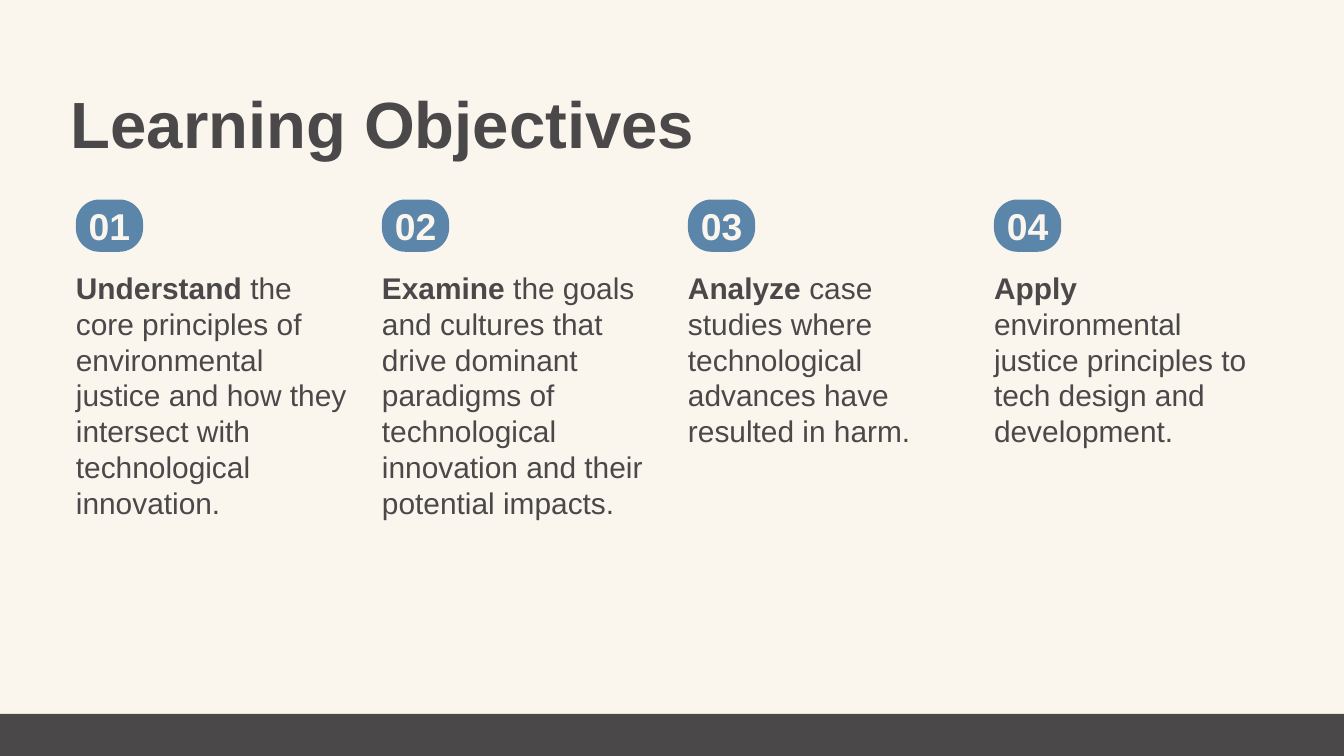
import pptx
import pptx.dml.color
import pptx.enum.shapes
import pptx.enum.text
from pptx.util import Pt

TITLE = "Learning Objectives"
OBJECTIVES = [
    ("Understand", "the core principles of environmental justice and how they "
                   "intersect with technological innovation."),
    ("Examine", "the goals and cultures that drive dominant paradigms of "
                "technological innovation and their potential impacts."),
    ("Analyze", "case studies where technological advances have resulted in harm."),
    ("Apply", "environmental justice principles to tech design and development."),
]

FONT = "Arial"
CREAM, CHARCOAL, BLUE = "FAF6EE", "4A4849", "5B85A9"
SLIDE_WIDTH, SLIDE_HEIGHT = 1440, 810
BAND_HEIGHT = 45
COLUMN_LEFT, COLUMN_PITCH, COLUMN_WIDTH = 81.3, 327.9, 298
BADGE_TOP, BADGE_WIDTH, BADGE_HEIGHT = 213.8, 72, 56
BODY_TOP, BODY_HEIGHT = 288.7, 271
LINE_SPACING = 1.2

SHAPES = pptx.enum.shapes.MSO_SHAPE
ALIGN = pptx.enum.text.PP_ALIGN
ANCHOR = pptx.enum.text.MSO_ANCHOR


def set_color(color_format, hex_color):
    color_format.rgb = pptx.dml.color.RGBColor.from_string(hex_color)


def paint(fill, hex_color):
    fill.solid()
    set_color(fill.fore_color, hex_color)


def add_filled_shape(slide, kind, left, top, width, height, hex_color):
    shape = slide.shapes.add_shape(kind, Pt(left), Pt(top), Pt(width), Pt(height))
    shape.shadow.inherit = False
    paint(shape.fill, hex_color)
    shape.line.fill.background()
    return shape


def write(box, spans, size, hex_color, align=ALIGN.LEFT, anchor=ANCHOR.TOP, wrap=True):
    """Fill a box without insets with one paragraph of (text, bold) spans."""
    frame = box.text_frame
    frame.auto_size = pptx.enum.text.MSO_AUTO_SIZE.NONE
    frame.word_wrap = wrap
    frame.vertical_anchor = anchor
    frame.margin_left = frame.margin_top = frame.margin_right = frame.margin_bottom = 0
    para = frame.paragraphs[0]
    para.alignment = align
    para.line_spacing = Pt(size * LINE_SPACING)
    para.space_before = Pt(0)
    para.font.name = FONT
    para.font.size = Pt(size)
    set_color(para.font.color, hex_color)
    for text, bold in spans:
        span = para.add_run()
        span.text = text
        span.font.bold = bold


def add_objective(slide, index, verb, rest):
    left = COLUMN_LEFT + index * COLUMN_PITCH
    badge = add_filled_shape(slide, SHAPES.ROUNDED_RECTANGLE, left, BADGE_TOP,
                             BADGE_WIDTH, BADGE_HEIGHT, BLUE)
    badge.adjustments[0] = 0.45
    write(badge, [(f"{index + 1:02}", True)], 40, CREAM,
          ALIGN.CENTER, ANCHOR.MIDDLE, wrap=False)
    body = slide.shapes.add_textbox(Pt(left), Pt(BODY_TOP),
                                    Pt(COLUMN_WIDTH), Pt(BODY_HEIGHT))
    write(body, [(verb + " ", True), (rest, False)], 32, CHARCOAL)


def main():
    deck = pptx.Presentation()
    deck.slide_width, deck.slide_height = Pt(SLIDE_WIDTH), Pt(SLIDE_HEIGHT)
    slide = deck.slides.add_slide(deck.slide_layouts.get_by_name("Title Only"))
    paint(slide.background.fill, CREAM)

    title = slide.shapes.title
    title.left, title.top = Pt(75.6), Pt(89.3)
    title.width, title.height = Pt(1283), Pt(85)
    write(title, [(TITLE, True)], 70, CHARCOAL)

    add_filled_shape(slide, SHAPES.RECTANGLE, 0, SLIDE_HEIGHT - BAND_HEIGHT,
                     SLIDE_WIDTH, BAND_HEIGHT, CHARCOAL)
    for index, (verb, rest) in enumerate(OBJECTIVES):
        add_objective(slide, index, verb, rest)

    deck.save("out.pptx")


if __name__ == "__main__":
    main()
